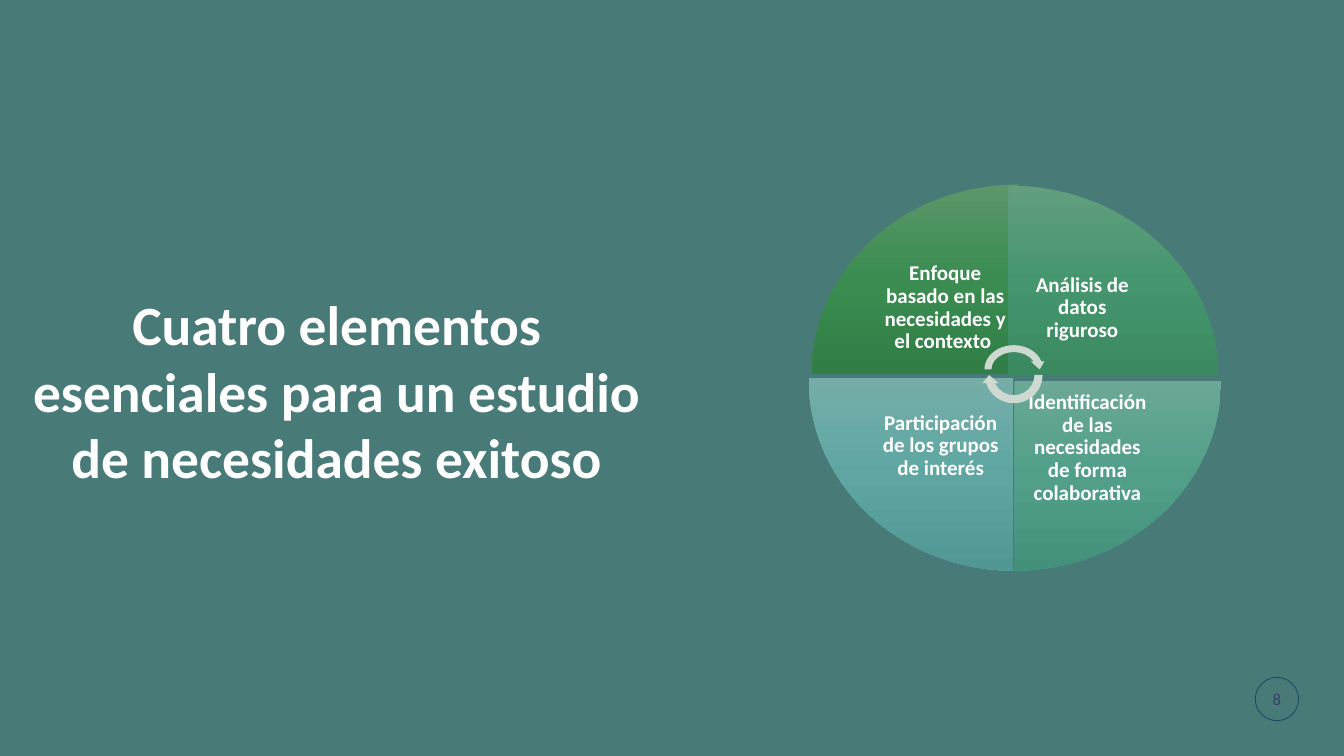
from lxml import etree
from pptx import Presentation
from pptx.dml.color import RGBColor
from pptx.enum.shapes import MSO_SHAPE
from pptx.enum.text import MSO_ANCHOR, PP_ALIGN
from pptx.oxml.ns import qn
from pptx.util import Inches, Pt

WEDGE, ARROW, OVAL = MSO_SHAPE.PIE_WEDGE, MSO_SHAPE.CIRCULAR_ARROW, MSO_SHAPE.OVAL
MIDDLE, CENTER = MSO_ANCHOR.MIDDLE, PP_ALIGN.CENTER
HEX = {"back": "487B78", "white": "FFFFFF", "ring": "134163",
       "num": "344068", "arrow": "CEDAD1"}
COLOR = {name: RGBColor.from_string(code) for name, code in HEX.items()}

deck = Presentation()
deck.slide_width, deck.slide_height = Inches(13.33), Inches(7.5)
slide = deck.slides.add_slide(deck.slide_layouts[6])
slide.background.fill.solid()
slide.background.fill.fore_color.rgb = COLOR["back"]


def draw(kind, box, turn=0):
    shape = slide.shapes.add_shape(kind, *map(Inches, box))
    shape.shadow.inherit = False
    shape.line.fill.background()
    shape.rotation = turn
    return shape


def write(shape, text, size, color, inset, bold=True, line=1.0):
    frame = shape.text_frame
    frame.word_wrap, frame.vertical_anchor = True, MIDDLE
    frame.margin_left = frame.margin_right = Inches(inset[0])
    frame.margin_top = frame.margin_bottom = Inches(inset[1])
    para = frame.paragraphs[0]
    para.text, para.alignment, para.line_spacing = text, CENTER, line
    font = para.font
    font.name, font.size, font.bold = "Calibri", Pt(size), bold
    font.color.rgb = COLOR[color]


# Title
title = slide.shapes.add_textbox(*map(Inches, (0.16, 2.9, 6.36, 1.94)))
write(title, "Cuatro elementos esenciales para un estudio de necesidades exitoso",
      39.6, "white", (0.1, 0.05))

# Slide number in a ring
ring = draw(OVAL, (12.45, 6.72, 0.43, 0.43))
ring.fill.background()
ring.line.color.rgb, ring.line.width = COLOR["ring"], Pt(0.5)
write(ring, "8", 12, "num", (0, 0), bold=False)

# Quarters, clockwise from top left: wedge, gradient, label box, label
quarters = [
    ((8.05, 1.83, 2.05, 1.88), ("5C966A", "3A8C51", "317F47"),
     (8.65, 2.39, 1.45, 1.33), "Enfoque basado en las necesidades y el contexto "),
    ((10.1, 1.74, 1.88, 2.08), ("639F7F", "45966E", "3A8961"),
     (10, 2.39, 1.47, 1.33), "Análisis de datos riguroso"),
    ((10.06, 3.78, 2.05, 1.88), ("6BA895", "519F89", "44917B"),
     (10.06, 3.78, 1.45, 1.33), "Identificación de las necesidades de forma colaborativa"),
    ((8.08, 3.69, 1.91, 2.03), ("76ADA9", "5FA6A2", "519793"),
     (8.61, 3.75, 1.44, 1.35), "Participación de los grupos de interés"),
]
for i, (box, shades, area, label) in enumerate(quarters):
    wedge = draw(WEDGE, box, 90 * i)
    wedge.fill.gradient()
    wedge.fill.gradient_angle = 270
    grad = wedge.element.spPr.find(qn("a:gradFill"))
    grad.set("rotWithShape", "0")  # shade stays upright
    stops = grad.find(qn("a:gsLst"))
    for stop in list(stops):
        stops.remove(stop)
    for j, shade in enumerate(shades):
        stop = etree.SubElement(stops, qn("a:gs"), pos=str(50000 * j))
        etree.SubElement(stop, qn("a:srgbClr"), val=shade)
    note = slide.shapes.add_textbox(*map(Inches, area))
    write(note, label, 15, "white", (0.12, 0.12), line=0.9)

# Cycle arrows in the middle
for turn, top, high in ((0, 3.39, 0.55), (180, 3.4, 0.64)):
    arrow = draw(ARROW, (9.73, top, 0.65, high), turn)
    arrow.fill.solid()
    arrow.fill.fore_color.rgb = COLOR["arrow"]

deck.save("out.pptx")
